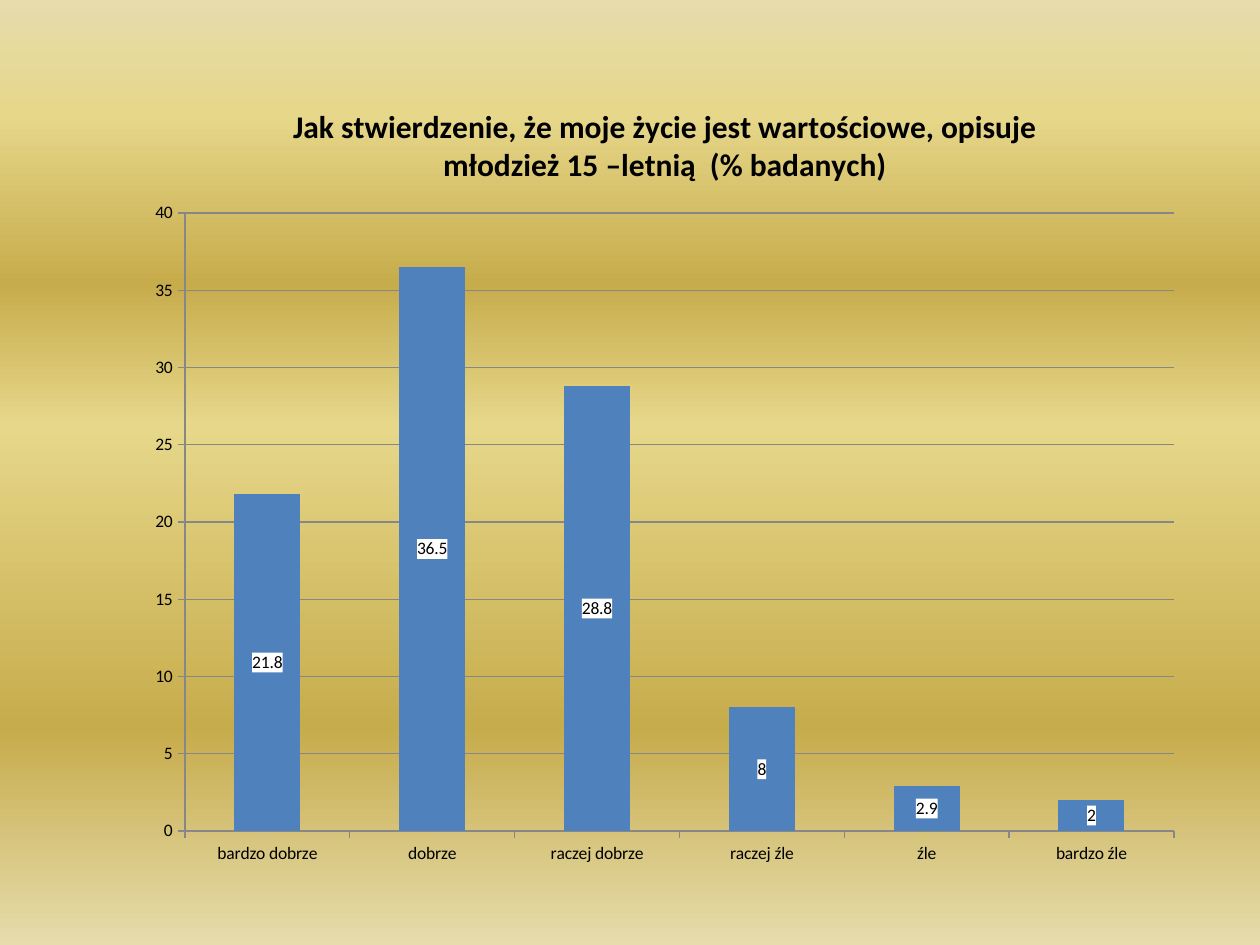
from lxml.etree import SubElement
from pptx import Presentation
from pptx.chart.data import CategoryChartData
from pptx.dml.color import RGBColor
from pptx.enum.chart import XL_CHART_TYPE as CT, XL_LABEL_POSITION as LP, XL_TICK_MARK as TM
from pptx.oxml import parse_xml
from pptx.oxml.ns import nsdecls, qn
from pptx.util import Pt

SCALE = 914400 / 126
COLORS = {"text": "000000", "bar": "4F81BD", "line": "878787", "label": "FFFFFF",
          "pale": "E6DCAC", "light": "E6D78A", "gold": "C7AC4C"}
STOPS = [(0, "pale"), (12, "light"), (30, "gold"), (45, "light"), (77, "gold"), (100, "pale")]
TITLE = "Jak stwierdzenie, że moje życie jest wartościowe, opisuje młodzież 15 –letnią  (% badanych)"
ANSWERS = {"bardzo dobrze": 21.8, "dobrze": 36.5, "raczej dobrze": 28.8,
           "raczej źle": 8, "źle": 2.9, "bardzo źle": 2}


def px(n):
    """Turn px into EMU."""
    return round(n * SCALE)


def rgb(name):
    """Look up a colour by name."""
    return RGBColor.from_string(COLORS[name])


def set_font(font, size, bold=False):
    """Apply the chart's typeface."""
    font.name, font.size, font.bold = "Calibri", Pt(size), bold
    font.color.rgb = rgb("text")


def paint_background(s):
    """Fill the slide with vertical gold bands."""
    fill = s.background.fill
    fill.gradient()
    fill.gradient_angle = 270
    stops = s.background._cSld.find(".//" + qn("a:gsLst"))
    for old in list(stops):
        stops.remove(old)
    for pos, name in STOPS:
        gs = SubElement(stops, qn("a:gs"), pos=str(pos * 1000))
        SubElement(gs, qn("a:srgbClr"), val=COLORS[name])


def place_plot(chart, box, left, top, width, height):
    """Fix the inner plot area inside the chart box."""
    area = chart._chartSpace.chart.plotArea
    for old in area.findall(qn("c:layout")):
        area.remove(old)
    layout = parse_xml(f"<c:layout {nsdecls('c')}><c:manualLayout/></c:layout>")
    values = [("layoutTarget", "inner"), ("xMode", "edge"), ("yMode", "edge"),
              ("x", left / box[2]), ("y", top / box[3]),
              ("w", width / box[2]), ("h", height / box[3])]
    for tag, val in values:
        SubElement(layout[0], qn(f"c:{tag}"), val=str(val))
    area.insert(0, layout)


def style_labels(plot):
    """Show values on white in the middle of the bars."""
    plot.has_data_labels = True
    labels = plot.data_labels
    labels.show_value = True
    labels.position = LP.CENTER
    labels.number_format, labels.number_format_is_linked = "General", False
    set_font(labels.font, 10)
    fill = parse_xml(f'<c:spPr {nsdecls("c", "a")}><a:solidFill>'
                     f'<a:srgbClr val="{COLORS["label"]}"/></a:solidFill></c:spPr>')
    labels._element.find(qn("c:txPr")).addprevious(fill)


def add_answers_chart(s, box):
    """Add the titled column chart of answers."""
    data = CategoryChartData()
    data.categories = list(ANSWERS)
    data.add_series("Series 1", list(ANSWERS.values()))
    chart = s.shapes.add_chart(CT.COLUMN_STACKED, *map(px, box), data).chart
    set_font(chart.font, 10)
    chart.has_legend = False
    chart.has_title = True
    tf = chart.chart_title.text_frame
    tf.text = TITLE
    set_font(tf.paragraphs[0].font, 18, True)
    chart.chart_title.include_in_layout = False

    plot = chart.plots[0]
    plot.gap_width, plot.overlap, plot.vary_by_categories = 150, 100, False
    fill = plot.series[0].format.fill
    fill.solid()
    fill.fore_color.rgb = rgb("bar")
    style_labels(plot)

    val_axis, cat_axis = chart.value_axis, chart.category_axis
    val_axis.minimum_scale, val_axis.maximum_scale, val_axis.major_unit = 0, 40, 5
    val_axis.has_major_gridlines = True
    for axis in (val_axis, cat_axis):
        axis.major_tick_mark, axis.minor_tick_mark = TM.OUTSIDE, TM.NONE
    for part in (val_axis, cat_axis, val_axis.major_gridlines):
        part.format.line.color.rgb = rgb("line")
        part.format.line.width = Pt(0.75)
    place_plot(chart, box, 51, 137, 989, 618)


def main():
    """Build and save the slide."""
    prs = Presentation()
    prs.slide_width, prs.slide_height = px(1260), px(945)
    s = prs.slides.add_slide(prs.slide_layouts[6])
    paint_background(s)
    add_answers_chart(s, (134, 76, 1062, 804))
    prs.save("out.pptx")


if __name__ == "__main__":
    main()
